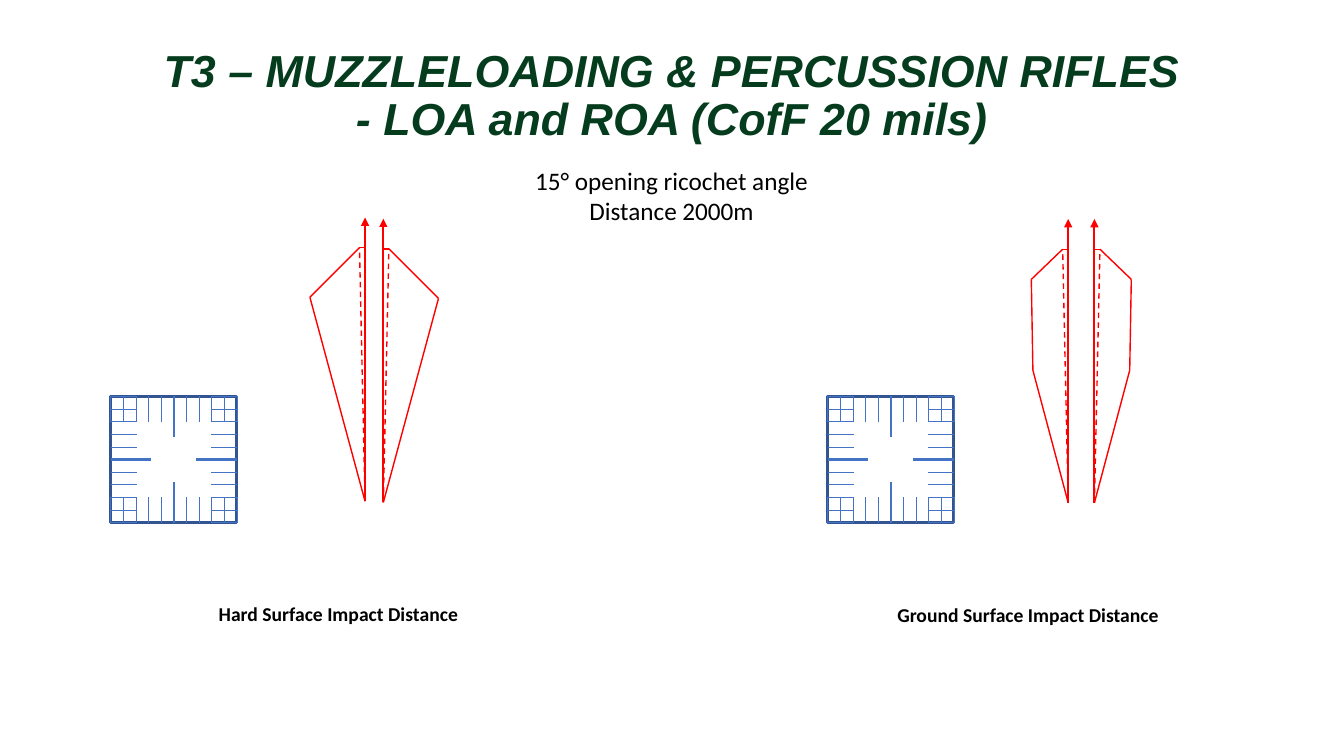
from dataclasses import dataclass
from typing import Optional

from lxml import etree
from pptx import Presentation
from pptx.dml.color import RGBColor
from pptx.enum.dml import MSO_LINE
from pptx.enum.shapes import MSO_CONNECTOR, MSO_SHAPE
from pptx.enum.text import MSO_ANCHOR, MSO_AUTO_SIZE, PP_ALIGN
from pptx.oxml.ns import qn
from pptx.util import Cm, Pt

STRAIGHT = MSO_CONNECTOR.STRAIGHT
RECT = MSO_SHAPE.RECTANGLE
DASH = MSO_LINE.DASH
CENTER = PP_ALIGN.CENTER
TOP = MSO_ANCHOR.TOP
NO_FIT = MSO_AUTO_SIZE.NONE

COLORS = {
    "title": "053C1E",
    "text": "000000",
    "frame": "325491",
    "tick": "4472C4",
    "fan": "FF0000",
}
TITLE_FONT = {"name": "Arial", "size": Pt(32), "bold": True, "italic": True}
NOTE_FONT = {"name": "Calibri", "size": Pt(18)}
CAPTION_FONT = {"name": "Calibri", "size": Pt(14), "bold": True}

SIDE = 3.18
STEPS = 10
TICK = 0.65
LONG_TICK = 1.02
GRID_TOP = 9.99
ARROW_RISE = 7.15
SHOULDER = (0.14, 6.39)

Point = tuple[float, float]


@dataclass
class TextBlock:
    lines: list[str]
    left: float
    top: float
    width: float
    height: float
    font: dict


@dataclass
class Fan:
    axis: float
    base: float
    direction: int


@dataclass
class Diagram:
    grid_left: float
    fans: list[Fan]
    outer_points: list[Point]


DIAGRAMS = [
    Diagram(2.79, [Fan(9.66, 12.66, 1), Fan(9.2, 12.63, -1)], [(1.39, 5.14)]),
    Diagram(20.86, [Fan(27.58, 12.67, 1), Fan(26.92, 12.67, -1)],
            [(0.89, 3.34), (0.93, 5.63)]),
]
TEXT_BLOCKS = [
    TextBlock(["Hard Surface Impact Distance"], 3.73, 15.04, 9.6, 0.86, CAPTION_FONT),
    TextBlock(["Ground Surface Impact Distance"], 21.11, 15.06, 9.6, 1.45, CAPTION_FONT),
    TextBlock(["15° opening ricochet angle", "Distance 2000m"],
              11.73, 4.04, 10.39, 1.8, NOTE_FONT),
]


def write_lines(tf, lines: list[str], font: dict, color: str,
                spacing: Optional[float] = None) -> None:
    tf.word_wrap = True
    tf.auto_size = NO_FIT
    tf.vertical_anchor = TOP
    for i, line in enumerate(lines):
        p = tf.paragraphs[0] if i == 0 else tf.add_paragraph()
        p.alignment = CENTER
        p.line_spacing = spacing
        r = p.add_run()
        r.text = line
        for name, value in font.items():
            setattr(r.font, name, value)
        r.font.color.rgb = RGBColor.from_string(COLORS[color])


def add_line(shapes, start: Point, end: Point, color: str, width: float,
             dashed: bool = False, arrow: bool = False):
    c = shapes.add_connector(STRAIGHT, *(Cm(v) for v in (*start, *end)))
    c.line.color.rgb = RGBColor.from_string(COLORS[color])
    c.line.width = Pt(width)
    if dashed:
        c.line.dash_style = DASH
    if arrow:
        etree.SubElement(c.line._get_or_add_ln(), qn("a:tailEnd"), type="triangle")
    etree.SubElement(c._element.spPr, qn("a:effectLst"))
    return c


def add_grid(shapes, left: float, top: float) -> None:
    sp = shapes.add_shape(RECT, Cm(left), Cm(top), Cm(SIDE), Cm(SIDE))
    sp.shadow.inherit = False
    sp.fill.background()
    sp.line.color.rgb = RGBColor.from_string(COLORS["frame"])
    sp.line.width = Pt(2)
    right, bottom = left + SIDE, top + SIDE
    for i in range(STEPS + 1):
        middle = i == STEPS // 2
        length, width = (LONG_TICK, 1.75) if middle else (TICK, 0.5)
        x, y = left + i * SIDE / STEPS, top + i * SIDE / STEPS
        ticks = [
            ((x, top), (x, top + length)),
            ((left, y), (left + length, y)),
            ((x, bottom), (x, bottom - length)),
            ((right, y), (right - length, y)),
        ]
        for site, (start, end) in enumerate(ticks):
            c = add_line(shapes, start, end, "tick", width)
            if middle:
                c.begin_connect(sp, site)


def add_fan(shapes, fan: Fan, outer_points: list[Point]) -> None:
    def place(offset: float, rise: float) -> Point:
        return fan.axis + fan.direction * offset, fan.base - rise

    origin, shoulder = place(0, 0), place(*SHOULDER)
    add_line(shapes, origin, place(0, ARROW_RISE), "fan", 1.5, arrow=True)
    add_line(shapes, origin, shoulder, "fan", 1, dashed=True)
    outline = [origin, *(place(*pt) for pt in outer_points), shoulder,
               place(0, SHOULDER[1])]
    for start, end in zip(outline, outline[1:]):
        add_line(shapes, start, end, "fan", 1)


def main() -> None:
    prs = Presentation()
    prs.slide_width, prs.slide_height = Cm(33.87), Cm(19.05)
    s = prs.slides.add_slide(prs.slide_layouts[5])

    title = s.shapes.title
    title.left, title.top, title.width, title.height = Cm(0), Cm(1.09), Cm(33.87), Cm(2.36)
    write_lines(title.text_frame,
                ["T3 – MUZZLELOADING & PERCUSSION RIFLES", "- LOA and ROA (CofF 20 mils)"],
                TITLE_FONT, "title", 0.9)

    for diagram in DIAGRAMS:
        group = s.shapes.add_group_shape()
        add_grid(group.shapes, diagram.grid_left, GRID_TOP)
        for fan in diagram.fans:
            add_fan(group.shapes, fan, diagram.outer_points)

    for block in TEXT_BLOCKS:
        box = s.shapes.add_textbox(Cm(block.left), Cm(block.top),
                                   Cm(block.width), Cm(block.height))
        write_lines(box.text_frame, block.lines, block.font, "text")

    prs.save("out.pptx")


if __name__ == "__main__":
    main()
